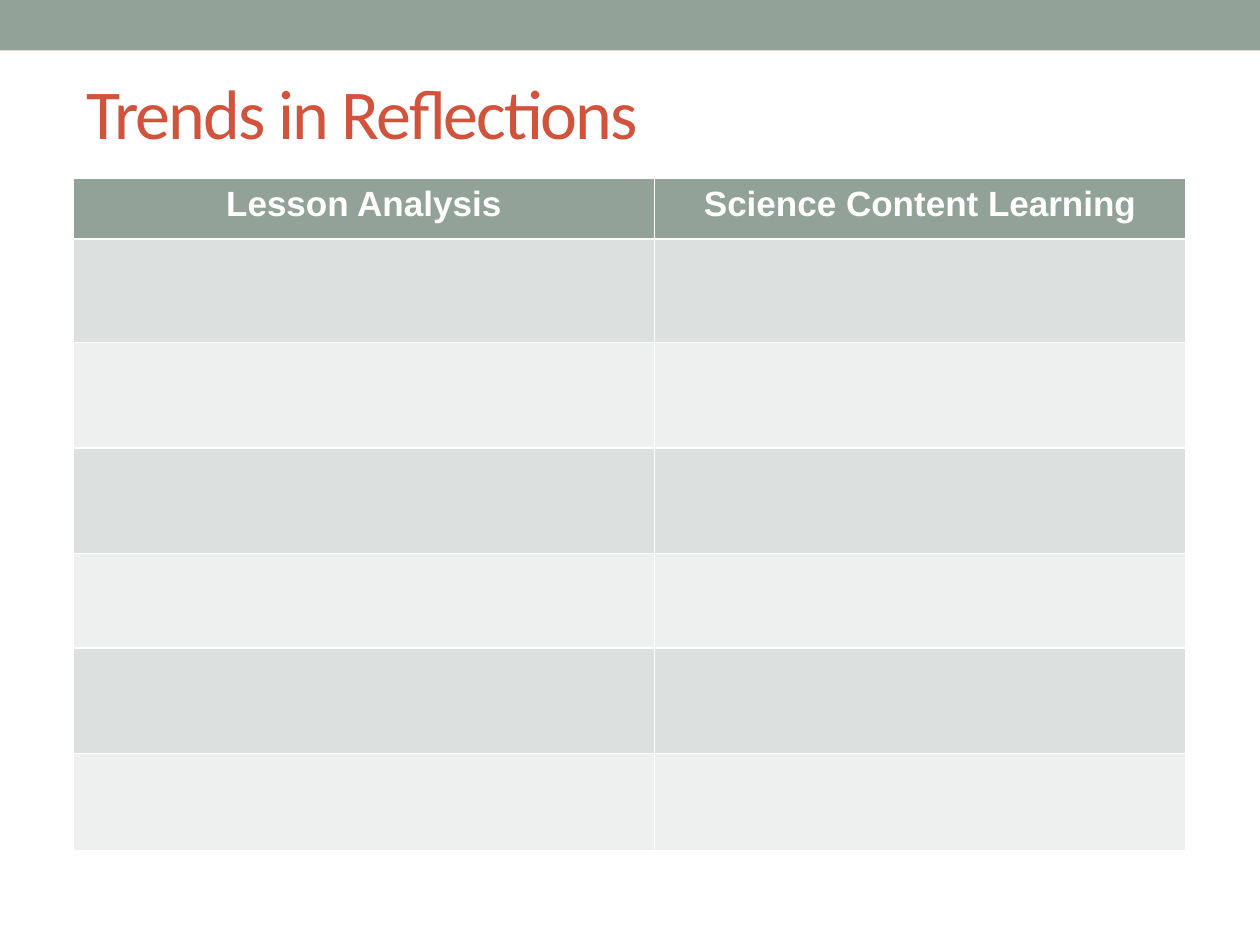
"""Build a slide with a two-column table for trends in reflections."""
import pptx
import pptx.dml.color
import pptx.enum.shapes
import pptx.enum.text
import pptx.util
from pptx.util import Cm

SAGE, RUST, WHITE = "93A299", "D2533C", "FFFFFF"
BANDS = ("DCE0DE", "EEF0EF")


def color(value):
    return pptx.dml.color.RGBColor.from_string(value)


class SlideBuilder:
    def __init__(self, slide):
        self.slide = slide
        self.title_font = "Calibri"
        self.table_font = "Arial"

    def style(self, paragraph, name, size, fill, bold=False):
        font = paragraph.font
        font.name, font.size, font.bold = name, pptx.util.Pt(size), bold
        font.color.rgb = color(fill)

    def banner(self, width, height):
        banner = self.slide.shapes.add_shape(
            pptx.enum.shapes.MSO_SHAPE.RECTANGLE, 0, 0, width, height)
        banner.shadow.inherit = False
        banner.fill.solid()
        banner.fill.fore_color.rgb = color(SAGE)
        banner.line.fill.background()

    def title(self, text, left, top, width, height):
        title = self.slide.shapes.title
        title.left, title.top, title.width, title.height = left, top, width, height
        frame = title.text_frame
        frame.text = text
        frame.word_wrap = True
        frame.vertical_anchor = pptx.enum.text.MSO_ANCHOR.MIDDLE
        heading = frame.paragraphs[0]
        heading.alignment = pptx.enum.text.PP_ALIGN.LEFT
        self.style(heading, self.title_font, 40, RUST)
        heading.runs[0]._r.get_or_add_rPr().set("spc", "-100")

    def table(self, headings, left, top, widths, heights):
        table = self.slide.shapes.add_table(
            len(heights), len(widths), left, top, sum(widths), sum(heights)).table
        for column, width in zip(table.columns, widths):
            column.width = width
        for index, (row, height) in enumerate(zip(table.rows, heights)):
            row.height = height
            for cell in row.cells:
                cell.fill.solid()
                cell.fill.fore_color.rgb = color(BANDS[(index - 1) % 2] if index else SAGE)
        for cell, heading in zip(table.rows[0].cells, headings):
            cell.text = heading
            label = cell.text_frame.paragraphs[0]
            label.alignment = pptx.enum.text.PP_ALIGN.CENTER
            self.style(label, self.table_font, 20, WHITE, bold=True)


def main():
    deck = pptx.Presentation()
    deck.slide_width, deck.slide_height = Cm(25.4), Cm(19.05)
    builder = SlideBuilder(deck.slides.add_slide(deck.slide_layouts[5]))
    builder.banner(deck.slide_width, Cm(1.02))
    builder.title("Trends in Reflections", Cm(1.48), Cm(1.07), Cm(22.86), Cm(2.34))
    builder.table(
        ("Lesson Analysis", "Science Content Learning"), Cm(1.48), Cm(3.6),
        widths=[Cm(11.71), Cm(10.72)],
        heights=[Cm(height) for height in (1.22, 2.08, 2.13, 2.13, 1.9, 2.13, 1.96)])
    deck.save("out.pptx")


if __name__ == "__main__":
    main()
